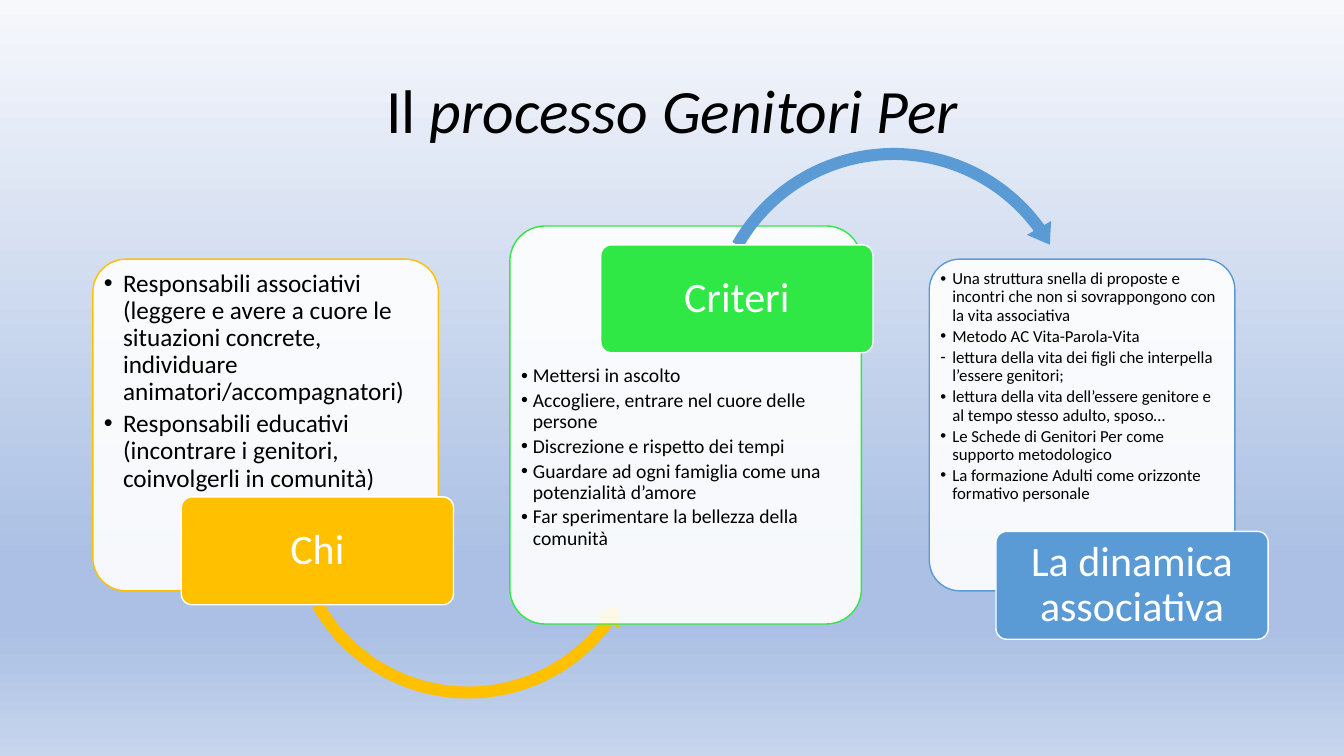
from lxml.etree import SubElement
from pptx import Presentation
from pptx.dml.color import RGBColor
from pptx.enum.shapes import MSO_SHAPE as Shape
from pptx.enum.text import MSO_ANCHOR as Anchor, MSO_AUTO_SIZE as AutoSize, PP_ALIGN as Align
from pptx.oxml.ns import qn
from pptx.util import Cm, Pt

FONT = "Calibri"
TITLE = [("Il ", False), ("processo Genitori Per", True)]
BACKDROP = [(0, "F6F8FC"), (74, "ABC0E4"), (83, "ABC0E4"), (100, "C7D5ED")]

# Lengths in centimetres, angles in degrees
CARD_MIDDLE = 10.71
CARD_INSET = 0.2
LABEL_SIZE = (6.86, 2.72)

STEPS = [
    dict(
        label="Chi", color="FFC000", label_at=(4.57, 12.52),
        card=(2.34, 8.71, 8.36), text_top=6.73, size=18, indent=0.48,
        items=[
            ("•", "Responsabili associativi (leggere e avere a cuore le situazioni concrete, "
                  "individuare animatori/accompagnatori)"),
            ("•", "Responsabili educativi (incontrare i genitori, coinvolgerli in comunità)"),
        ],
        arrow=dict(kind=Shape.LEFT_CIRCULAR_ARROW, at=(7.09, 8.38), side=9.42,
                   thickness=0.032, head=0.037, head_angle=6.59, end=36.33, start=150.55),
    ),
    dict(
        label="Criteri", color="30E845", label_at=(15.14, 6.17),
        card=(12.85, 8.86, 10.03), text_top=9.14, size=14, indent=0.3,
        items=[
            ("•", "Mettersi in ascolto"),
            ("•", "Accogliere, entrare nel cuore delle persone"),
            ("•", "Discrezione e rispetto dei tempi"),
            ("•", "Guardare ad ogni famiglia come una potenzialità d’amore"),
            ("•", "Far sperimentare la bellezza della comunità"),
        ],
        arrow=dict(kind=Shape.CIRCULAR_ARROW, at=(17.65, 3.53), side=9.75, color="5B9BD5",
                   thickness=0.031, head=0.036, head_angle=6.36, end=324, start=209.54),
    ),
    dict(
        label="La dinamica associativa", color="5B9BD5", label_at=(25.1, 13.39),
        card=(23.42, 7.7, 8.36), text_top=6.73, size=12, indent=0.3,
        items=[
            ("•", "Una struttura snella di proposte e incontri che non si sovrappongono "
                  "con la vita associativa"),
            ("•", "Metodo AC Vita-Parola-Vita"),
            ("-", "lettura della vita dei figli che interpella l’essere genitori;"),
            ("•", "lettura della vita dell’essere genitore e al tempo stesso adulto, sposo…"),
            ("•", "Le Schede di Genitori Per come supporto metodologico"),
            ("•", "La formazione Adulti come orizzonte formativo personale"),
        ],
        arrow=None,
    ),
]


def rgb(value):
    return RGBColor.from_string(value)


def place(box, left, top, width, height):
    box.left, box.top, box.width, box.height = Cm(left), Cm(top), Cm(width), Cm(height)


def style_paragraph(para, size, color):
    para.line_spacing = 0.9
    para.space_before = Pt(0)
    font = para.font
    font.name, font.size, font.bold = FONT, Pt(size), False
    font.color.rgb = rgb(color)


def set_frame(frame, anchor, side, end):
    frame.word_wrap = True
    frame.auto_size = AutoSize.NONE
    frame.vertical_anchor = anchor
    frame.margin_left = frame.margin_right = Cm(side)
    frame.margin_top = frame.margin_bottom = Cm(end)


def add_shape(page, kind, left, top, width, height, fill, line=None):
    shape = page.shapes.add_shape(kind, Cm(left), Cm(top), Cm(width), Cm(height))
    shape.shadow.inherit = False
    shape.fill.solid()
    shape.fill.fore_color.rgb = rgb(fill)
    if line:
        shape.line.color.rgb = rgb(line)
        shape.line.width = Pt(1)
    else:
        shape.line.fill.background()
    return shape


def paint_background(page):
    fill = page.background.fill
    fill.gradient()
    fill.gradient_angle = 270
    stops = page._element.find(".//" + qn("a:gsLst"))
    for stop in list(stops):
        stops.remove(stop)
    for percent, color in BACKDROP:
        stop = SubElement(stops, qn("a:gs"), pos=str(percent * 1000))
        SubElement(stop, qn("a:srgbClr"), val=color)


def add_title(page):
    title = page.shapes.title
    place(title, 2.34, 1.02, 29.21, 3.68)
    set_frame(title.text_frame, Anchor.MIDDLE, 0.25, 0.13)
    para = title.text_frame.paragraphs[0]
    para.alignment = Align.CENTER
    style_paragraph(para, 44, "000000")
    for text, italic in TITLE:
        span = para.add_run()
        span.text = text
        span.font.italic = italic


def add_card(page, step):
    left, width, height = step["card"]
    card = add_shape(page, Shape.ROUNDED_RECTANGLE, left, CARD_MIDDLE - height / 2,
                     width, height, "FFFFFF", step["color"])
    card.adjustments[0] = 0.1
    color = card._element.spPr.find(qn("a:solidFill")).find(qn("a:srgbClr"))
    SubElement(color, qn("a:alpha"), val="90000")


def fill_list(page, box, step):
    """Put the list on top of its card and fill it with bulleted items."""
    page.shapes._spTree.append(box._element)
    left, width, height = step["card"]
    bottom = CARD_MIDDLE + height / 2 - CARD_INSET
    place(box, left + CARD_INSET, step["text_top"],
          width - 2 * CARD_INSET, bottom - step["text_top"])
    frame = box.text_frame
    set_frame(frame, Anchor.TOP, 0.08, 0.08)
    for index, (bullet, text) in enumerate(step["items"]):
        para = frame.add_paragraph() if index else frame.paragraphs[0]
        para.text = text
        props = para._p.get_or_add_pPr()
        props.set("marL", str(Cm(step["indent"])))
        props.set("indent", str(-Cm(step["indent"])))
        SubElement(props, qn("a:buChar"), char=bullet)
        style_paragraph(para, step["size"], "000000")
        para.space_after = Pt(round(step["size"] * 0.18, 1))


def add_arrow(page, arrow, color):
    side = arrow["side"]
    shape = add_shape(page, arrow["kind"], *arrow["at"], side, side, color)
    angles = [arrow[key] * 0.6 for key in ("head_angle", "end", "start")]
    for index, value in enumerate([arrow["thickness"], *angles, arrow["head"]]):
        shape.adjustments[index] = value


def add_label(page, step):
    label = add_shape(page, Shape.ROUNDED_RECTANGLE, *step["label_at"], *LABEL_SIZE,
                      step["color"], "FFFFFF")
    label.adjustments[0] = 0.1
    set_frame(label.text_frame, Anchor.MIDDLE, 0.23, 0.18)
    para = label.text_frame.paragraphs[0]
    para.text = step["label"]
    para.alignment = Align.CENTER
    style_paragraph(para, 30, "FFFFFF")


def main():
    deck = Presentation()
    deck.slide_width, deck.slide_height = Cm(33.87), Cm(19.05)
    page = deck.slides.add_slide(deck.slide_layouts.get_by_name("Comparison"))
    paint_background(page)
    add_title(page)
    *lists, spare = list(page.placeholders)[1:]
    spare._element.getparent().remove(spare._element)
    for step, box in zip(STEPS, lists):
        add_card(page, step)
        fill_list(page, box, step)
        if step["arrow"]:
            add_arrow(page, step["arrow"], step["arrow"].get("color", step["color"]))
        add_label(page, step)
    deck.save("out.pptx")


if __name__ == "__main__":
    main()
